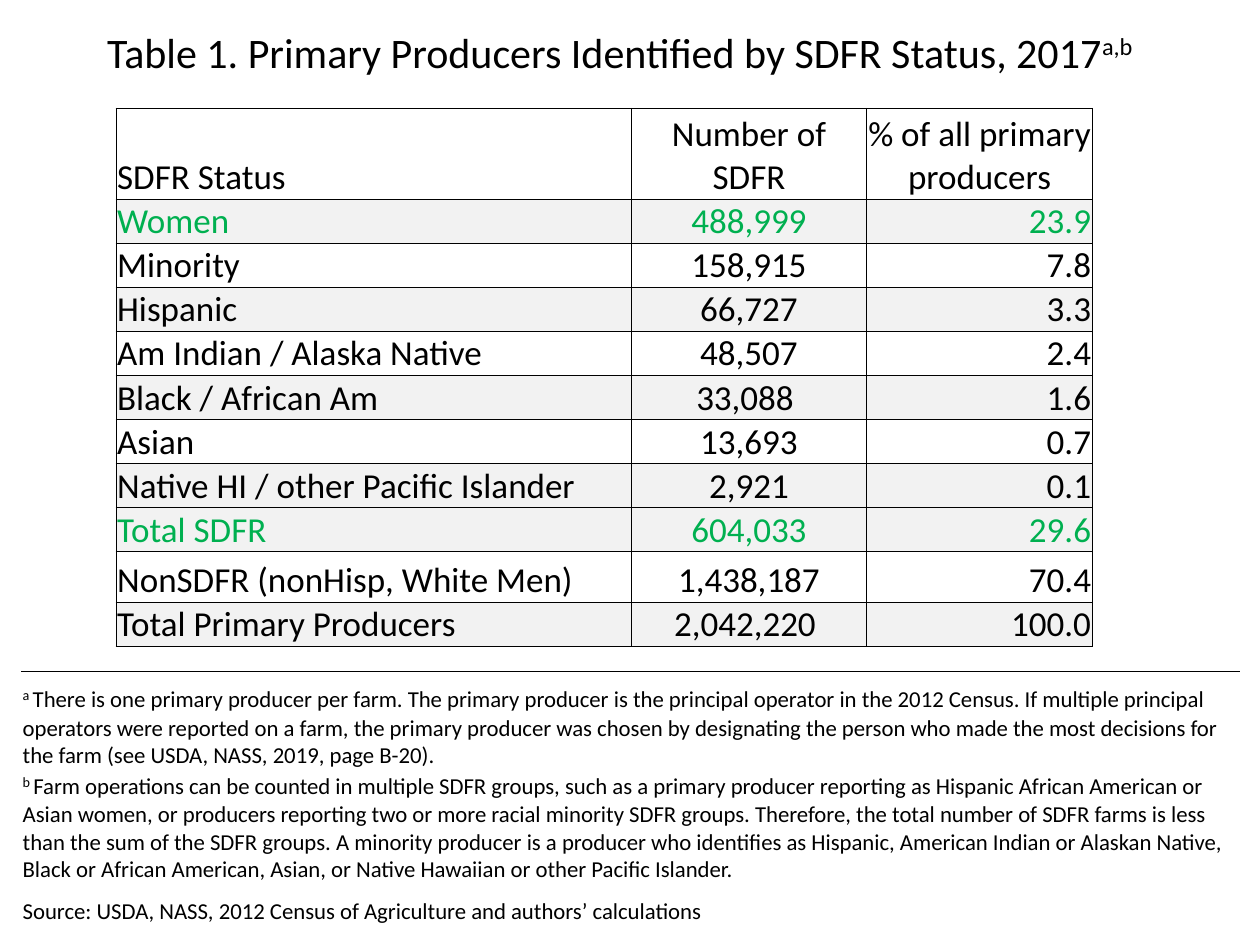
from dataclasses import dataclass

from lxml import etree
from pptx import Presentation
from pptx.dml.color import RGBColor
from pptx.enum.text import MSO_ANCHOR, MSO_AUTO_SIZE, PP_ALIGN
from pptx.oxml.ns import qn
from pptx.util import Inches, Pt

LEFT, CENTER, RIGHT = PP_ALIGN.LEFT, PP_ALIGN.CENTER, PP_ALIGN.RIGHT
TOP, BOTTOM = MSO_ANCHOR.TOP, MSO_ANCHOR.BOTTOM
TITLE_ONLY_LAYOUT = 5
PLAIN_TABLE_STYLE = "{2D5ABB26-0587-4C30-8999-92F81FD0307C}"


@dataclass(frozen=True)
class Theme:
    font: str = "Calibri"
    text: RGBColor = RGBColor(0x00, 0x00, 0x00)
    highlight: RGBColor = RGBColor(0x00, 0xB0, 0x50)
    shade: RGBColor = RGBColor(0xF2, 0xF2, 0xF2)
    title_size: int = 24
    table_size: int = 20
    note_size: int = 13
    marker_size: int = 14
    border_width: float = 0.5


THEME = Theme()

HEADER = ("SDFR Status", "Number of SDFR", "% of all primary producers")
PRODUCERS = [
    ("Women", "488,999", "23.9"),
    ("Minority", "158,915", "7.8"),
    ("Hispanic", "66,727", "3.3"),
    ("Am Indian / Alaska Native", "48,507", "2.4"),
    ("Black / African Am", "33,088 ", "1.6"),
    ("Asian", "13,693", "0.7"),
    ("Native HI / other Pacific Islander", "2,921", "0.1"),
    ("Total SDFR", "604,033", "29.6"),
    ("NonSDFR (nonHisp, White Men)", "1,438,187", "70.4"),
    ("Total Primary Producers", "2,042,220 ", "100.0"),
]
HIGHLIGHTED = {"Women", "Total SDFR"}
SHADED = HIGHLIGHTED | {
    "Hispanic",
    "Black / African Am",
    "Native HI / other Pacific Islander",
    "Total Primary Producers",
}
COLUMN_WIDTHS = (4.09, 1.87, 1.79)
ROW_HEIGHTS = (0.72, *[0.35] * 8, 0.4, 0.35)

NOTES = [
    ("a ", "There is one primary producer per farm. The primary producer is the "
     "principal operator in the 2012 Census. If multiple principal operators were "
     "reported on a farm, the primary producer was chosen by designating the person "
     "who made the most decisions for the farm (see USDA, NASS, 2019, page B-20)."),
    ("b ", "Farm operations can be counted in multiple SDFR groups, such as a primary "
     "producer reporting as Hispanic African American or Asian women, or producers "
     "reporting two or more racial minority SDFR groups. Therefore, the total number "
     "of SDFR farms is less than the sum of the SDFR groups. A minority producer is a "
     "producer who identifies as Hispanic, American Indian or Alaskan Native, Black or "
     "African American, Asian, or Native Hawaiian or other Pacific Islander."),
    ("", "Source: USDA, NASS, 2012 Census of Agriculture and authors’ calculations"),
]
NOTE_HEIGHTS = (0.78, 0.75, 0.34)


def format_paragraph(paragraph, size, color=THEME.text, alignment=LEFT):
    paragraph.alignment = alignment
    paragraph.font.name = THEME.font
    paragraph.font.size = Pt(size)
    paragraph.font.color.rgb = color


def add_superscript(paragraph, text):
    run = paragraph.add_run()
    run.text = text
    run.font._element.set("baseline", "30000")
    return run


def set_borders(cell, sides):
    """Draw a thin line on each named side: L, R, T or B, in that order."""
    properties = cell._tc.get_or_add_tcPr()
    for index, side in enumerate(sides):
        line = etree.Element(qn(f"a:ln{side}"), w=str(Pt(THEME.border_width)))
        fill = etree.SubElement(line, qn("a:solidFill"))
        etree.SubElement(fill, qn("a:srgbClr"), val=str(THEME.text))
        properties.insert(index, line)


def add_plain_table(slide, box, widths, heights):
    """Add an unstyled table with tight, bottom-anchored cells."""
    table = slide.shapes.add_table(
        len(heights), len(widths), *map(Inches, box)).table
    table.first_row = table.horz_banding = False
    table._tbl.tblPr.find(qn("a:tableStyleId")).text = PLAIN_TABLE_STYLE
    for column, width in zip(table.columns, widths):
        column.width = Inches(width)
    for row, height in zip(table.rows, heights):
        row.height = Inches(height)
    for cell in table.iter_cells():
        cell.vertical_anchor = BOTTOM
        cell.margin_left = cell.margin_right = cell.margin_top = Inches(0.01)
        cell.margin_bottom = 0
        cell.fill.background()
    return table


def place_title(slide, box):
    title = slide.shapes.title
    title.left, title.top, title.width, title.height = map(Inches, box)
    frame = title.text_frame
    frame.word_wrap = True
    frame.auto_size = MSO_AUTO_SIZE.SHAPE_TO_FIT_TEXT
    frame.vertical_anchor = TOP
    paragraph = frame.paragraphs[0]
    paragraph.add_run().text = (
        "Table 1. Primary Producers Identified by SDFR Status, 2017")
    add_superscript(paragraph, "a,b")
    format_paragraph(paragraph, THEME.title_size)


def add_producer_table(slide, box):
    table = add_plain_table(slide, box, COLUMN_WIDTHS, ROW_HEIGHTS)
    for row_index, values in enumerate([HEADER, *PRODUCERS]):
        label = values[0]
        color = THEME.highlight if label in HIGHLIGHTED else THEME.text
        alignments = (LEFT, CENTER, RIGHT if row_index else CENTER)
        for column_index, value in enumerate(values):
            cell = table.cell(row_index, column_index)
            cell.text = value
            format_paragraph(cell.text_frame.paragraphs[0], THEME.table_size,
                             color, alignments[column_index])
            if label in SHADED:
                cell.fill.solid()
                cell.fill.fore_color.rgb = THEME.shade
            set_borders(cell, "LRTB")


def add_notes(slide, box):
    table = add_plain_table(slide, box, (box[2],), NOTE_HEIGHTS)
    for row_index, (marker, note) in enumerate(NOTES):
        paragraph = table.cell(row_index, 0).text_frame.paragraphs[0]
        if marker:
            add_superscript(paragraph, marker).font.size = Pt(THEME.marker_size)
        paragraph.add_run().text = note
        format_paragraph(paragraph, THEME.note_size)
    set_borders(table.cell(0, 0), "T")


def main():
    presentation = Presentation()
    presentation.slide_width = Inches(10)
    presentation.slide_height = Inches(7.5)
    slide = presentation.slides.add_slide(
        presentation.slide_layouts[TITLE_ONLY_LAYOUT])
    place_title(slide, (0.75, 0.16, 8.49, 0.5))
    add_producer_table(slide, (0.92, 0.86, 7.75, 4.31))
    add_notes(slide, (0.17, 5.33, 9.67, 2.01))
    presentation.save("out.pptx")


if __name__ == "__main__":
    main()
